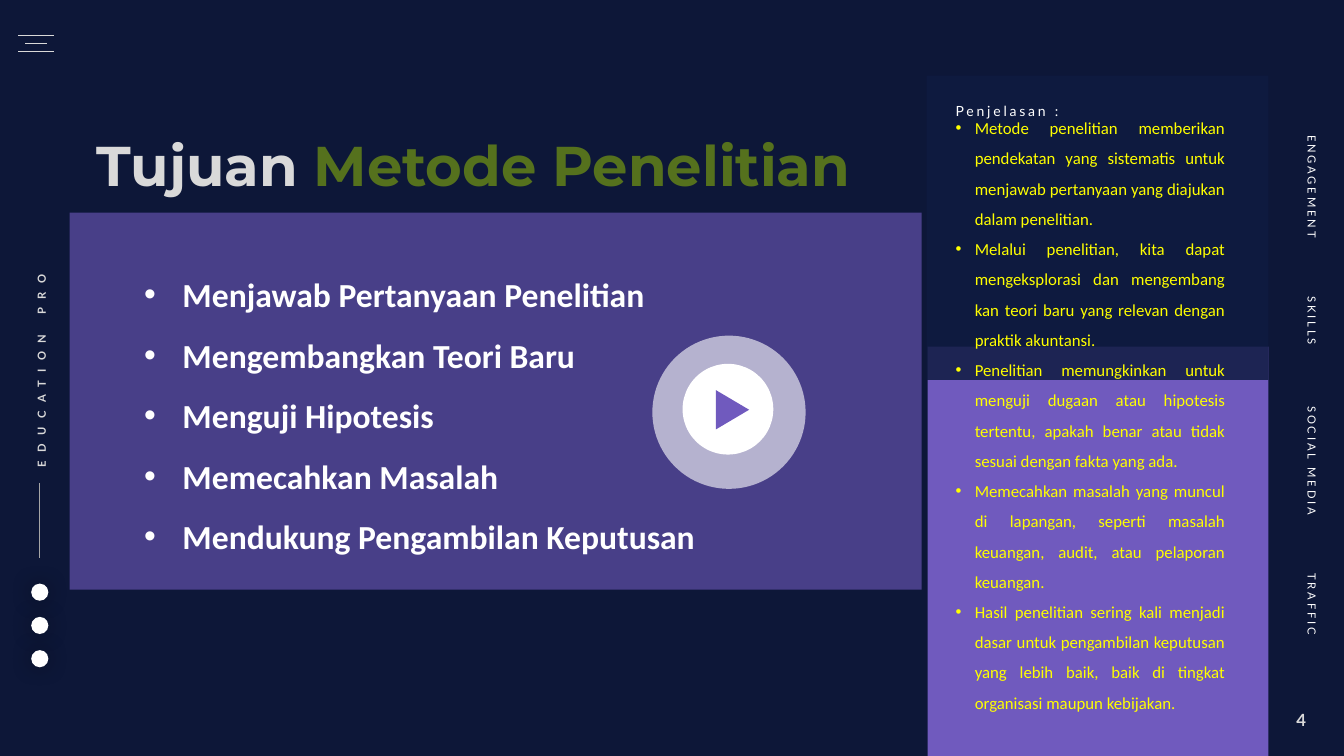
from lxml.etree import SubElement as Sub
from pptx import Presentation
from pptx.dml.color import RGBColor
from pptx.enum.shapes import MSO_CONNECTOR as Link, MSO_SHAPE as Kind
from pptx.enum.text import MSO_ANCHOR as Anchor, MSO_AUTO_SIZE as Fit, PP_ALIGN as Align
from pptx.oxml.ns import qn
from pptx.util import Inches, Pt

NAVY, VIOLET, WHITE, GREY = "0D1738", "705ABE", "FFFFFF", "D9D9D9"
GOALS = [
    "Menjawab Pertanyaan Penelitian",
    "Mengembangkan Teori Baru",
    "Menguji Hipotesis",
    "Memecahkan Masalah",
    "Mendukung Pengambilan Keputusan",
]
NOTES = [
    "Metode penelitian memberikan pendekatan yang sistematis untuk menjawab "
    "pertanyaan yang diajukan dalam penelitian.",
    "Melalui penelitian, kita dapat mengeksplorasi dan mengembang kan teori baru "
    "yang relevan dengan praktik akuntansi.",
    "Penelitian memungkinkan untuk menguji dugaan atau hipotesis tertentu, apakah "
    "benar atau tidak sesuai dengan fakta yang ada.",
    "Memecahkan masalah yang muncul di lapangan, seperti masalah keuangan, audit, "
    "atau pelaporan keuangan.",
    "Hasil penelitian sering kali menjadi dasar untuk pengambilan keputusan yang "
    "lebih baik, baik di tingkat organisasi maupun kebijakan.",
]
TOPICS = [("ENGAGEMENT", 1.34), ("SKILLS", 2.94), ("SOCIAL MEDIA", 4.03), ("TRAFFIC", 5.69)]


def paint(fill, color, alpha=100):
    """Set a solid fill from a hex string, with opacity in percent."""
    fill.solid()
    fill.fore_color.rgb = RGBColor.from_string(color)
    if alpha < 100:
        tone = fill._xPr.find(qn("a:solidFill"))[0]
        Sub(tone, qn("a:alpha")).set("val", str(alpha * 1000))


def shape(slide, kind, box, color, alpha=100, turn=0):
    """Add a filled preset shape without outline or shadow."""
    item = slide.shapes.add_shape(kind, *map(Inches, box))
    item.shadow.inherit = False
    item.line.fill.background()
    item.rotation = turn
    paint(item.fill, color, alpha)
    return item


def glow(item):
    """Give a shape a soft dark shadow on all sides."""
    halo = Sub(item._element.spPr.find(qn("a:effectLst")), qn("a:outerShdw"))
    halo.set("blurRad", str(Pt(16)))
    tone = Sub(halo, qn("a:srgbClr"))
    tone.set("val", "000000")
    Sub(tone, qn("a:alpha")).set("val", "40000")


def line(slide, ends, color):
    """Add a thin straight line."""
    item = slide.shapes.add_connector(Link.STRAIGHT, *map(Inches, ends))
    item.line.width = Pt(1)
    paint(item.line.fill, color)
    Sub(item._element.spPr, qn("a:effectLst"))


def write(para, words, size, face, color, bold=False, gap=0):
    """Add one formatted run, with letter spacing in points."""
    run = para.add_run()
    run.text = words
    font = run.font
    font.size, font.name, font.bold = Pt(size), face, bold
    paint(font.fill, color)
    if gap:
        run._r.get_or_add_rPr().set("spc", str(gap * 100))


def place(item, box):
    """Move a text shape and return its frame, aligned to the top."""
    item.left, item.top, item.width, item.height = map(Inches, box)
    frame = item.text_frame
    frame.word_wrap, frame.auto_size = True, Fit.NONE
    frame.vertical_anchor = Anchor.TOP
    return frame


def label(slide, box, words, size, color, bold=False, gap=0, turn=0):
    """Add a single line of text and return its frame."""
    item = slide.shapes.add_textbox(*map(Inches, box))
    item.rotation = turn
    frame = place(item, box)
    write(frame.paragraphs[0], words, size, "Lato", color, bold, gap)
    return frame


def bullets(frame, items, size, color, dent, align, bold=False):
    """Fill a frame with a bulleted list."""
    for i, words in enumerate(items):
        para = frame.add_paragraph() if i else frame.paragraphs[0]
        para.alignment, para.line_spacing = align, 1.5
        para.space_before = para.space_after = Pt(0)
        props = para._p.get_or_add_pPr()
        props.set("marL", str(Inches(dent)))
        props.set("indent", str(Inches(-dent)))
        Sub(props, qn("a:buFont")).set("typeface", "Arial")
        Sub(props, qn("a:buChar")).set("char", "•")
        write(para, words, size, "Calibri", color, bold)


def rail(slide):
    """Draw the menu icon, the side caption and the dots at the left."""
    for y, inset in ((0.35, 0), (0.43, 0.07), (0.51, 0)):
        line(slide, (0.18 + inset, y, 0.54 - inset, y), GREY)
    label(slide, (-0.69, 3.51, 2.21, 0.24), "EDUCATION PRO", 8, GREY, True, 6, 270)
    line(slide, (0.39, 4.79, 0.39, 5.54), "A6A6A6")
    for i in range(3):
        glow(shape(slide, Kind.OVAL, (0.31, 5.79 + 0.33 * i, 0.17, 0.17), WHITE))


def topics(slide):
    """Write the vertical topic names at the right."""
    for words, top in TOPICS:
        frame = label(slide, (12.79, top, 0.34, 1.3), words, 8, WHITE, gap=2)
        frame.margin_top = 0
        frame._txBody.bodyPr.set("vert", "vert")


def play(slide):
    """Draw the play button."""
    shape(slide, Kind.OVAL, (6.47, 3.33, 1.52, 1.52), WHITE, 60)
    shape(slide, Kind.OVAL, (6.77, 3.61, 0.9, 0.9), WHITE)
    shape(slide, Kind.ISOSCELES_TRIANGLE, (7.07, 3.9, 0.39, 0.33), VIOLET, turn=90)


def main():
    """Build the slide and save it."""
    deck = Presentation()
    deck.slide_width, deck.slide_height = Inches(13.33), Inches(7.5)
    slide = deck.slides.add_slide(deck.slide_layouts[1])
    paint(slide.background.fill, NAVY)
    title, body = slide.placeholders

    rail(slide)
    label(slide, (12.76, 6.99, 0.51, 0.3), "4", 12, GREY, True)
    shape(slide, Kind.RECTANGLE, (9.2, 3.44, 3.38, 4.06), VIOLET)
    shape(slide, Kind.RECTANGLE, (9.19, 0.75, 3.39, 3.02), "0F1B41", 85)
    shape(slide, Kind.RECTANGLE, (0.69, 2.11, 8.45, 3.74), VIOLET, 60)

    head = place(title, (0.86, 1.24, 8.05, 0.77)).paragraphs[0]
    head.alignment = Align.LEFT
    write(head, "Tujuan ", 40, "Montserrat", GREY, True)
    write(head, "Metode Penelitian", 40, "Montserrat", "55711D", True)

    play(slide)
    notes = slide.shapes.add_textbox(0, 0, 0, 0)
    bullets(place(notes, (9.38, 1.02, 2.87, 6.48)), NOTES, 12, "FFFF00", 0.19, Align.JUSTIFY)
    slide.shapes._spTree.append(body._element)
    bullets(place(body, (1.33, 2.47, 6.13, 3.06)), GOALS, 24, WHITE, 0.38, Align.LEFT, True)
    label(slide, (9.38, 0.97, 2.31, 0.27), "Penjelasan :", 10, WHITE, gap=2)
    topics(slide)
    deck.save("out.pptx")


if __name__ == "__main__":
    main()
